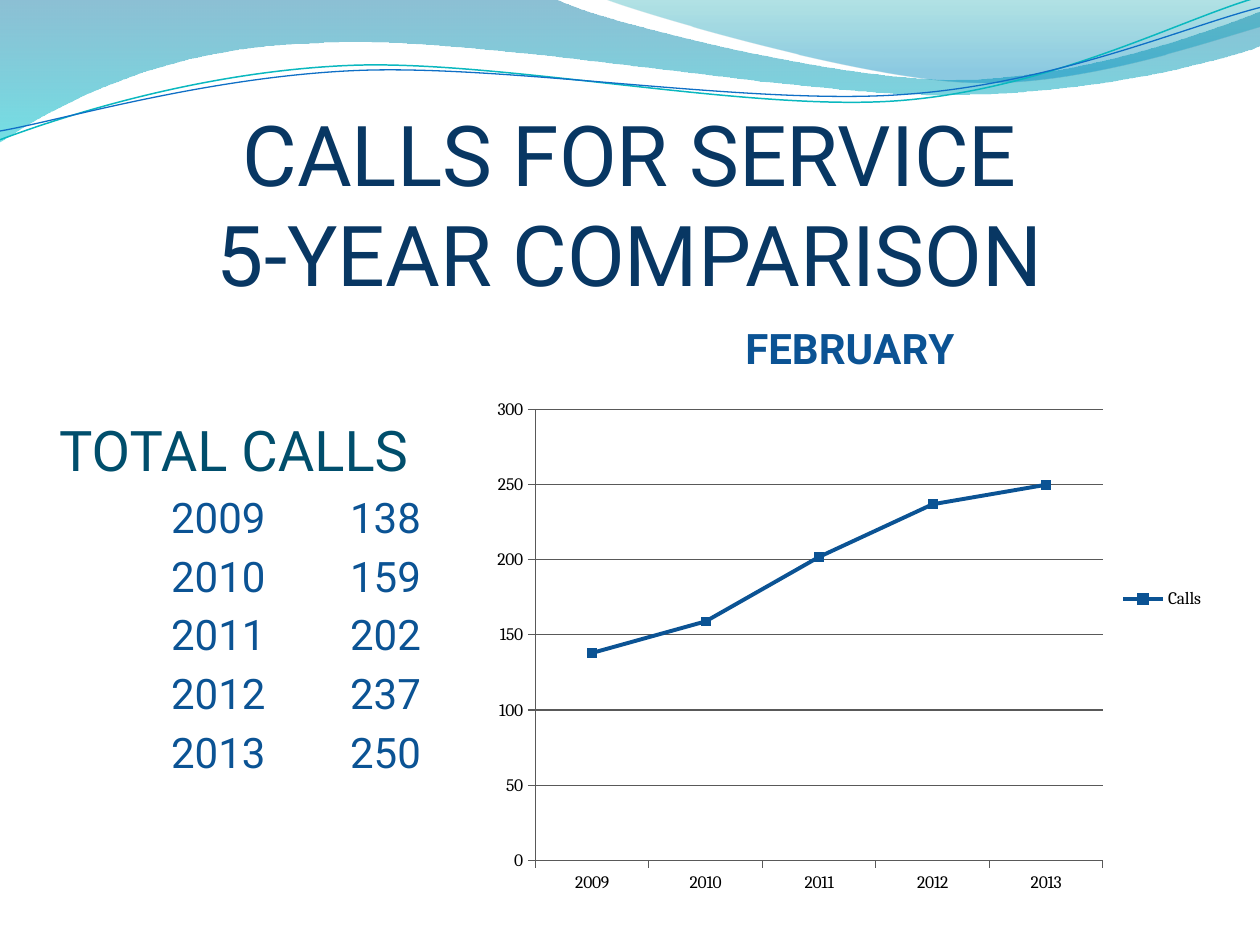
import math

import lxml.etree
import pptx
import pptx.chart.data
import pptx.dml.color
import pptx.enum.chart
import pptx.enum.text
import pptx.oxml
import pptx.oxml.ns
import pptx.util
from pptx.util import Inches

COLORS = {
    "title": "083763", "heading": "004E6C", "accent": "0B5394",
    "grid": "595959", "axis_text": "000000",
    "wave_blue": "0074A1", "wave_cyan": "00C6CF",
    "crest_teal": "00A1A9", "crest_blue": "008BBF",
    "teal_line": "0AB8BF", "blue_line": "0F6FC6",
}
CALLS = {"2009": 138, "2010": 159, "2011": 202, "2012": 237, "2013": 250}
TILT = -2.7

WAVE = [(0, 0), (4.4, -0.01), (4.76, 0.17, 6.64, 0.63, 7.58, 0.63),
        (8.53, 0.63, 9.58, 0.26, 10, 0.09), (10.01, 0.36),
        (9.83, 0.44, 8.7, 0.76, 7.46, 0.75), (6.22, 0.75, 3.82, 0.28, 2.57, 0.34),
        (1.29, 0.36, 0.46, 0.83, -0.01, 1.13)]
CREST = [(4.79, -0.01), (5.09, 0.11, 6.82, 0.62, 7.69, 0.65),
         (8.56, 0.69, 9.61, 0.32, 10, 0.21), (10, 0)]
TEAL_LINE = [(0, 1.11), (0.48, 0.93, 1.58, 0.57, 2.77, 0.52),
             (3.95, 0.47, 5.93, 0.89, 7.13, 0.8), (8.33, 0.71, 9.38, 0.15, 9.98, -0.02)]
BLUE_LINE = [(0, 1.04), (0.47, 0.96, 1.64, 0.61, 2.83, 0.56),
             (4.03, 0.51, 5.97, 0.84, 7.17, 0.75), (8.36, 0.67, 9.41, 0.21, 10, 0.06)]


def rgb(name):
    """Return the named colour."""
    return pptx.dml.color.RGBColor.from_string(COLORS[name])


def style_font(font, size, color, face="Roboto", bold=False):
    """Set size, colour, face and weight of a font."""
    font.size, font.name, font.bold = pptx.util.Pt(size), face, bold
    font.color.rgb = rgb(color)


def turn(point, degrees, center=(5, 0.58)):
    """Turn a point clockwise about a centre."""
    angle = math.radians(degrees)
    dx, dy = point[0] - center[0], point[1] - center[1]
    return (center[0] + dx * math.cos(angle) - dy * math.sin(angle),
            center[1] + dx * math.sin(angle) + dy * math.cos(angle))


def add_outline(slide, left, top, outline, closed, tilt=0):
    """Draw an outline of corners and cubic curves offset from the given corner."""
    pairs = [pair for segment in outline for pair in zip(segment[::2], segment[1::2])]
    points = [(left + Inches(x), top + Inches(y))
              for x, y in (turn(pair, -tilt) for pair in pairs)]
    builder = slide.shapes.build_freeform(*points[0], scale=1.0)
    builder.add_line_segments(points[1:], close=closed)
    shape = builder.convert_to_shape()
    shape.shadow.inherit = False
    shape.rotation = tilt
    sides = iter(shape.element.spPr.findall(".//" + pptx.oxml.ns.qn("a:lnTo")))
    for segment in outline[1:]:
        group = [next(sides) for _ in segment[::2]]
        if len(group) == 3:
            curve = lxml.etree.Element(pptx.oxml.ns.qn("a:cubicBezTo"))
            group[0].addprevious(curve)
            for side in group:
                curve.append(side[0])
                side.getparent().remove(side)
    return shape


def add_header(slide, left, top):
    """Draw the translucent waves and the two thin lines."""
    waves = [(WAVE, [("wave_blue", 0, 45), ("wave_cyan", 1, 55)]),
             (CREST, [("crest_teal", 0, 30), ("crest_blue", 0.8, 45)])]
    for outline, stops in waves:
        wave = add_outline(slide, left, top, outline, True)
        wave.line.fill.background()
        wave.fill.gradient()
        wave.fill.gradient_angle = 270
        for stop, (color, position, opacity) in zip(wave.fill.gradient_stops, stops):
            stop.color.rgb = rgb(color)
            stop.position = position
        tints = wave.element.spPr.findall(".//" + pptx.oxml.ns.qn("a:srgbClr"))
        for tint, (color, position, opacity) in zip(tints, stops):
            alpha = lxml.etree.SubElement(tint, pptx.oxml.ns.qn("a:alpha"))
            alpha.set("val", str(opacity * 1000))
    for outline, color, width in [(TEAL_LINE, "teal_line", 0.85),
                                  (BLUE_LINE, "blue_line", 0.75)]:
        ripple = add_outline(slide, left, top, outline, False, TILT)
        ripple.fill.background()
        ripple.line.color.rgb = rgb(color)
        ripple.line.width = pptx.util.Pt(width)


def add_title(slide, left, top, width, height):
    """Place the two-line title at the bottom of its box."""
    frame = slide.shapes.add_textbox(left, top, width, height).text_frame
    frame.word_wrap = True
    frame.vertical_anchor = pptx.enum.text.MSO_ANCHOR.BOTTOM
    frame.margin_left = frame.margin_right = frame.margin_bottom = 0
    frame.text = "CALLS FOR SERVICE\v5-YEAR COMPARISON"
    title = frame.paragraphs[0]
    title.alignment = pptx.enum.text.PP_ALIGN.CENTER
    style_font(title.font, 48, "title")


def add_totals(slide, left, top, width, height):
    """List the yearly totals under their heading on two tab stops."""
    frame = slide.shapes.add_textbox(left, top, width, height).text_frame
    frame.word_wrap = True
    frame.text = "\n".join(
        ["TOTAL CALLS"] + [f"\t{year}\t{total}" for year, total in CALLS.items()])
    heading, *rows = frame.paragraphs
    style_font(heading.font, 32, "heading")
    heading._p.get_or_add_pPr().set("marL", str(Inches(0.54)))
    for row in rows:
        style_font(row.font, 24, "accent")
        row.space_before = pptx.util.Pt(4.8)
        row._p.get_or_add_pPr().insert_element_before(
            pptx.oxml.parse_xml(
                f'<a:tabLst {pptx.oxml.ns.nsdecls("a")}>'
                f'<a:tab pos="{Inches(1.43)}" algn="l"/>'
                f'<a:tab pos="{Inches(2.85)}" algn="l"/></a:tabLst>'),
            "a:defRPr", "a:extLst")


def add_calls_chart(slide, left, top, width, height):
    """Plot the calls per year as a line with square markers."""
    data = pptx.chart.data.CategoryChartData()
    data.categories = list(CALLS)
    data.add_series("Calls", list(CALLS.values()))
    chart = slide.shapes.add_chart(
        pptx.enum.chart.XL_CHART_TYPE.LINE_MARKERS, left, top, width, height, data).chart
    style_font(chart.font, 10, "axis_text", "Cambria")
    chart.has_title = True
    chart.chart_title.text_frame.text = "FEBRUARY"
    style_font(chart.chart_title.text_frame.paragraphs[0].font, 24, "accent", bold=True)
    chart.has_legend = True
    chart.legend.position = pptx.enum.chart.XL_LEGEND_POSITION.RIGHT
    chart.legend.include_in_layout = False

    scale = chart.value_axis
    scale.minimum_scale, scale.maximum_scale, scale.major_unit = 0, 300, 50
    for line in (scale.format.line, scale.major_gridlines.format.line,
                 chart.category_axis.format.line):
        line.color.rgb = rgb("grid")
        line.width = pptx.util.Pt(0.6)

    plot = chart.plots[0]
    plot.vary_by_categories = False
    calls = plot.series[0]
    calls.smooth = False
    calls.format.line.color.rgb = rgb("accent")
    calls.format.line.width = pptx.util.Pt(2.25)
    calls.marker.style = pptx.enum.chart.XL_MARKER_STYLE.SQUARE
    calls.marker.size = 5
    calls.marker.format.fill.solid()
    calls.marker.format.fill.fore_color.rgb = rgb("accent")
    calls.marker.format.line.color.rgb = rgb("accent")


def main():
    """Build the slide and save it."""
    deck = pptx.Presentation()
    deck.slide_width, deck.slide_height = Inches(10), Inches(7.5)
    slide = deck.slides.add_slide(deck.slide_layouts[6])
    add_header(slide, Inches(0), Inches(0))
    add_title(slide, Inches(0.5), Inches(1.16), Inches(9), Inches(1.25))
    add_totals(slide, Inches(-0.17), Inches(3.25), Inches(3.92), Inches(4.07))
    add_calls_chart(slide, Inches(3.83), Inches(2.33), Inches(5.83), Inches(4.85))
    deck.save("out.pptx")


if __name__ == "__main__":
    main()
